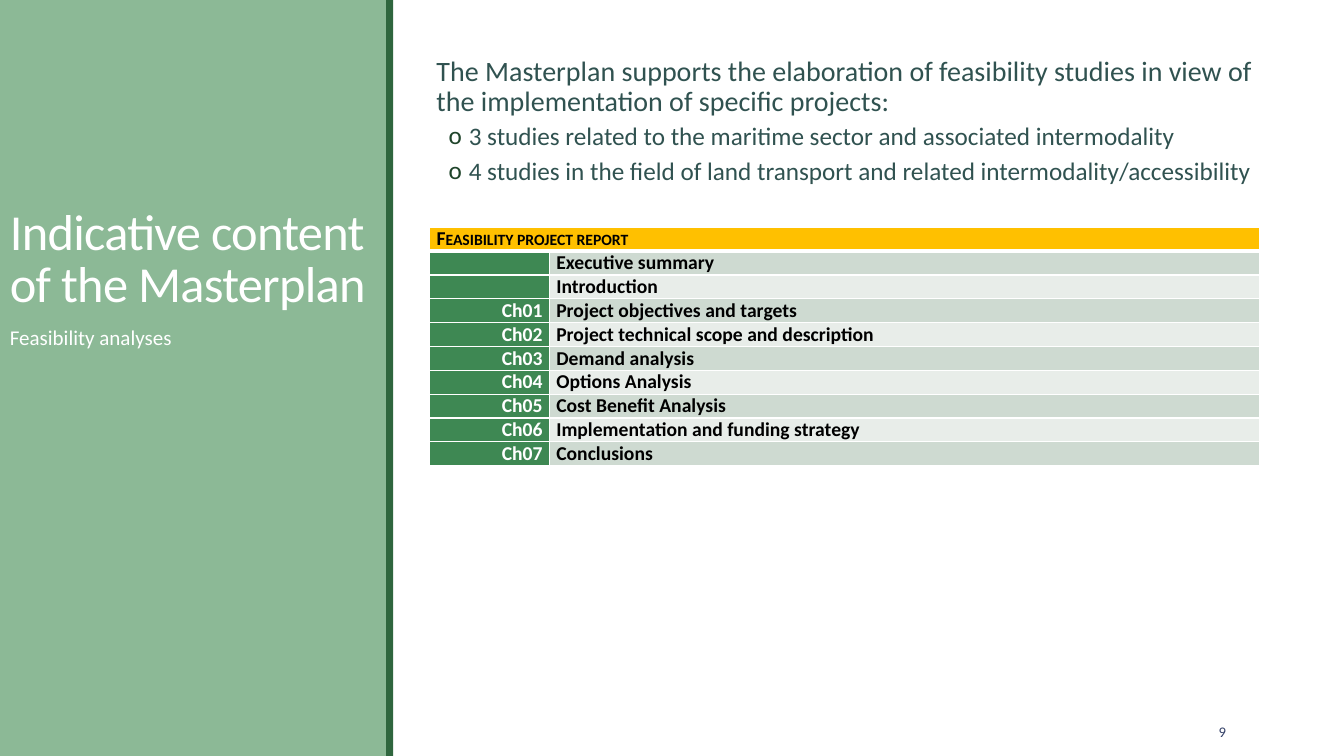
import pptx
import pptx.util
import pptx.dml.color
import pptx.enum.shapes
import pptx.enum.text
import pptx.oxml.ns
import lxml.etree

Pt = pptx.util.Pt
RGBColor = pptx.dml.color.RGBColor
PP_ALIGN = pptx.enum.text.PP_ALIGN
MSO_ANCHOR = pptx.enum.text.MSO_ANCHOR
qn = pptx.oxml.ns.qn

WHITE = RGBColor(0xFF, 0xFF, 0xFF)
BLACK = RGBColor(0x00, 0x00, 0x00)
SAGE = RGBColor(0x8C, 0xB9, 0x96)
FOREST = RGBColor(0x2F, 0x66, 0x3E)
BULLET = RGBColor(0x1F, 0x44, 0x2A)
BODY = RGBColor(0x30, 0x52, 0x50)
NAVY = RGBColor(0x34, 0x40, 0x68)
AMBER = RGBColor(0xFF, 0xC0, 0x00)
GREEN = RGBColor(0x3E, 0x88, 0x53)
BANDS = [RGBColor(0xCE, 0xDA, 0xD1), RGBColor(0xE8, 0xED, 0xE9)]

FONT = "Calibri"
LEAD = ("The Masterplan supports the elaboration of feasibility studies in view of "
        "the implementation of specific projects:")
STUDIES = [
    "3 studies related to the maritime sector and associated intermodality",
    "4 studies in the field of land transport and related intermodality/accessibility",
]
REPORT_TITLE = "Feasibility project report"
CHAPTERS = [
    ("", "Executive summary"),
    ("", "Introduction"),
    ("Ch01", "Project objectives and targets"),
    ("Ch02", "Project technical scope and description"),
    ("Ch03", "Demand analysis"),
    ("Ch04", "Options Analysis"),
    ("Ch05", "Cost Benefit Analysis"),
    ("Ch06", "Implementation and funding strategy"),
    ("Ch07", "Conclusions"),
]


def add_bar(s, x, y, w, h, color):
    sp = s.shapes.add_shape(pptx.enum.shapes.MSO_SHAPE.RECTANGLE, Pt(x), Pt(y), Pt(w), Pt(h))
    sp.shadow.inherit = False
    sp.fill.solid()
    sp.fill.fore_color.rgb = color
    sp.line.fill.background()


def add_text_frame(s, x, y, w, h, anchor=MSO_ANCHOR.TOP):
    tf = s.shapes.add_textbox(Pt(x), Pt(y), Pt(w), Pt(h)).text_frame
    tf.word_wrap = True
    tf.vertical_anchor = anchor
    return tf


def write(p, text, size, color, bold=False):
    p.text = text
    for r in p.runs:
        r.font.name = FONT
        r.font.size = Pt(size)
        r.font.bold = bold
        r.font.color.rgb = color


def set_bullet(p, char, color, margin, hang):
    pPr = p._p.get_or_add_pPr()
    pPr.set("marL", str(Pt(margin)))
    pPr.set("indent", str(-Pt(hang)))
    clr = lxml.etree.SubElement(pPr, qn("a:buClr"))
    lxml.etree.SubElement(clr, qn("a:srgbClr"), val=str(color))
    lxml.etree.SubElement(pPr, qn("a:buFont"), typeface=FONT)
    lxml.etree.SubElement(pPr, qn("a:buChar"), char=char)


def add_side_panel(s, x, y, w, h):
    add_bar(s, x, y, w, h, SAGE)
    add_bar(s, x + w, y, 5, h, FOREST)
    p = add_text_frame(s, x, y + 46.8, w, 180, MSO_ANCHOR.BOTTOM).paragraphs[0]
    write(p, "Indicative content of the Masterplan", 36, WHITE)
    p.line_spacing = 0.85
    p.runs[0].font._element.set("spc", "-50")
    p = add_text_frame(s, x, y + 230.4, w, 266.4).paragraphs[0]
    write(p, "Feasibility analyses", 15, WHITE)
    p.line_spacing = 0.9


def add_overview(s, x, y, w, h):
    tf = add_text_frame(s, x, y, w, h)
    tf.margin_left = tf.margin_right = 0
    p = tf.paragraphs[0]
    p._p.get_or_add_pPr().set("marL", str(Pt(7.2)))
    write(p, LEAD, 20, BODY)
    p.line_spacing = 0.9
    p.space_after = Pt(2)
    for study in STUDIES:
        p = tf.add_paragraph()
        set_bullet(p, "o", BULLET, 30.24, 14.4)
        write(p, study, 18, BODY)
        p.line_spacing = 0.9
        p.space_before = Pt(2)
        p.space_after = Pt(4)


def style_cell(cell, fill, bottom=1, top=1):
    cell.margin_left = cell.margin_right = Pt(4.9)
    cell.margin_top = cell.margin_bottom = 0
    tcPr = cell._tc.get_or_add_tcPr()
    for side, width in (("L", 1), ("R", 1), ("T", top), ("B", bottom)):
        ln = lxml.etree.SubElement(tcPr, qn("a:ln" + side), w=str(Pt(width)))
        paint = lxml.etree.SubElement(ln, qn("a:solidFill"))
        lxml.etree.SubElement(paint, qn("a:srgbClr"), val=str(WHITE))
    cell.fill.solid()
    cell.fill.fore_color.rgb = fill


def write_cell(cell, text, color, align=PP_ALIGN.LEFT):
    p = cell.text_frame.paragraphs[0]
    p.alignment = align
    write(p, text, 14, color, True)
    if not text:
        lxml.etree.SubElement(p._p, qn("a:endParaRPr"), sz="1400")


def add_report_table(s, x, y, w, h):
    rows = len(CHAPTERS) + 1
    table = s.shapes.add_table(rows, 2, Pt(x), Pt(y), Pt(w), Pt(h)).table
    table.columns[0].width = Pt(85.5)
    table.columns[1].width = Pt(w - 85.5)
    for row in table.rows:
        row.height = Pt(h / rows)
    head, spanned = table.cell(0, 0), table.cell(0, 1)
    for cell in (head, spanned):
        style_cell(cell, AMBER, bottom=3)
    write_cell(spanned, "", BLACK)
    head.merge(spanned)
    write_cell(head, REPORT_TITLE, BLACK)
    head.text_frame.paragraphs[0].runs[0].font._element.set("cap", "small")
    for i, (chapter, title) in enumerate(CHAPTERS):
        number, name = table.cell(i + 1, 0), table.cell(i + 1, 1)
        top = 3 if i == 0 else 1
        style_cell(number, GREEN, top=top)
        style_cell(name, BANDS[i % 2], top=top)
        write_cell(number, chapter, WHITE, PP_ALIGN.RIGHT)
        write_cell(name, title, BLACK)


def add_page_number(s, x, y, w, h):
    p = add_text_frame(s, x, y, w, h, MSO_ANCHOR.MIDDLE).paragraphs[0]
    write(p, "9", 10.5, NAVY)
    p.alignment = PP_ALIGN.RIGHT


def main():
    prs = pptx.Presentation()
    prs.slide_width, prs.slide_height = Pt(960), Pt(540)
    s = prs.slides.add_slide(prs.slide_layouts[6])
    add_side_panel(s, 0, 0, 275.8, 540)
    add_overview(s, 304.6, 37.4, 607, 434)
    add_report_table(s, 307, 162.3, 592.6, 170.5)
    add_page_number(s, 779.8, 508.3, 103, 28.8)
    prs.save("out.pptx")


if __name__ == "__main__":
    main()
